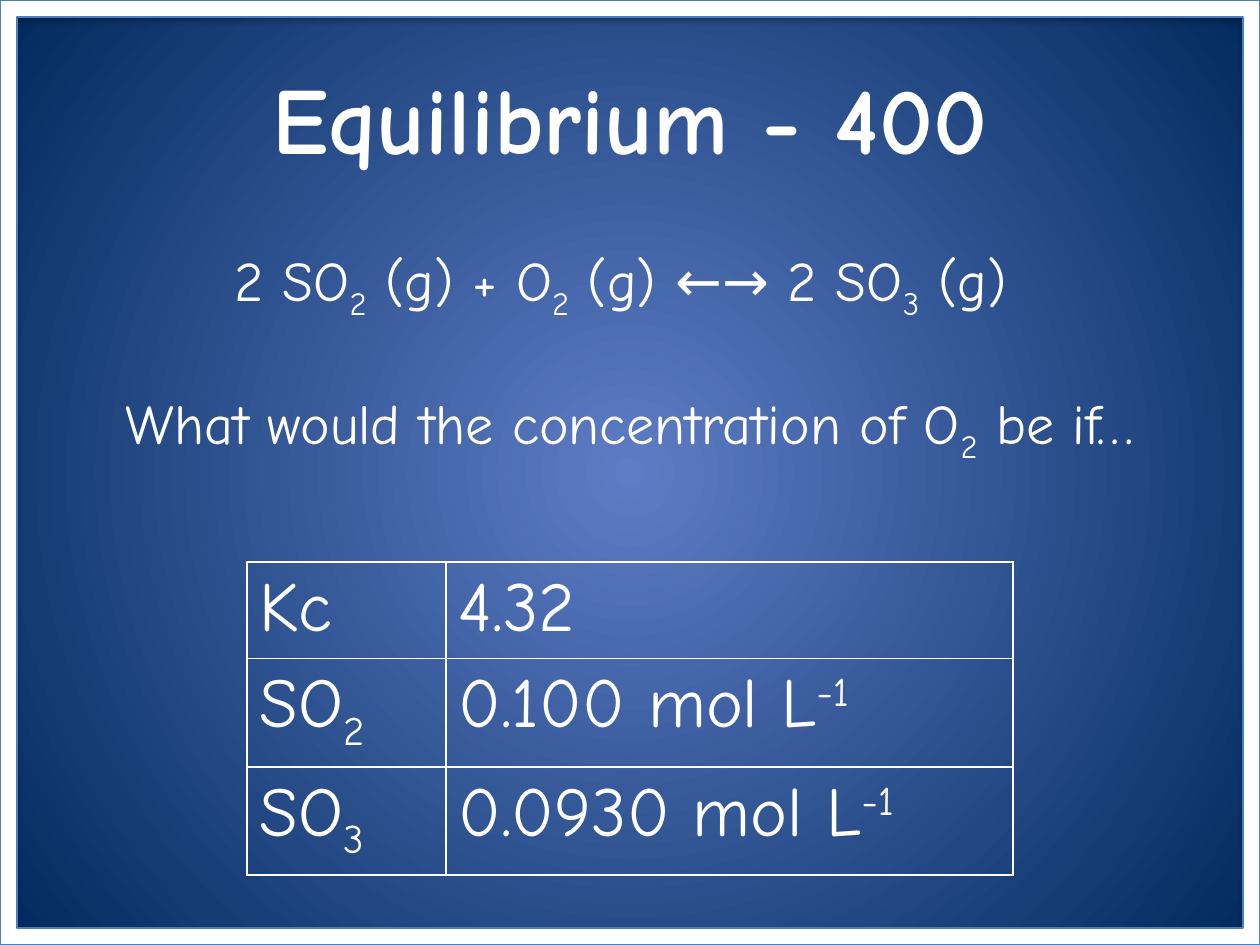
from lxml.etree import SubElement
from pptx import Presentation
from pptx.dml.color import RGBColor
from pptx.enum.shapes import MSO_SHAPE
from pptx.enum.text import MSO_ANCHOR, PP_ALIGN
from pptx.oxml import parse_xml
from pptx.oxml.ns import nsdecls, qn
from pptx.util import Inches, Pt

WIDTH, HEIGHT = 10, 7.5
FONT = "Comic Neue"
WHITE = "FFFFFF"
SUBSCRIPT, SUPERSCRIPT = -25000, 30000


def color(hex_string):
    return RGBColor.from_string(hex_string)


def inches(box):
    return [Inches(length) for length in box]


def write(paragraph, pieces, size, align=PP_ALIGN.LEFT, bold=False):
    """Fill a paragraph with pieces: plain strings or (string, baseline) pairs."""
    paragraph.alignment = align
    font = paragraph.font
    font.name, font.size, font.bold = FONT, Pt(size), bold
    font.color.rgb = color(WHITE)
    for piece in pieces:
        text, baseline = (piece, 0) if isinstance(piece, str) else piece
        run = paragraph.add_run()
        run.text = text
        if baseline:
            run.font._element.set("baseline", str(baseline))


def add_background(slide, center, edge):
    fill = slide.background.fill
    fill.gradient()
    for stop, shade in zip(fill.gradient_stops, (center, edge)):
        stop.color.rgb = color(shade)
    # Turn the linear gradient into a circle around the middle of the slide
    linear = slide.background._cSld.find(".//" + qn("a:lin"))
    linear.getparent().replace(linear, parse_xml(
        f'<a:path {nsdecls("a")} path="circle">'
        '<a:fillToRect l="50000" t="50000" r="50000" b="50000"/></a:path>'))


def add_frame(slide, box):
    frame = slide.shapes.add_shape(MSO_SHAPE.FRAME, *inches(box))
    frame.adjustments[0] = 0.018
    frame.fill.solid()
    frame.fill.fore_color.rgb = color(WHITE)
    frame.line.color.rgb = color("4B7EBC")
    frame.line.width = Pt(0.75)
    # Soft shadow falling straight down
    frame.shadow.inherit = False
    effects = frame._element.spPr.find(qn("a:effectLst"))
    shadow = SubElement(effects, qn("a:outerShdw"), blurRad=str(Pt(3.1)),
                        dist=str(Pt(1.8)), dir="5400000", rotWithShape="0")
    black = SubElement(shadow, qn("a:srgbClr"), val="000000")
    SubElement(black, qn("a:alpha"), val="35000")


def add_text(slide, box, lines, size, gap=0, anchor=MSO_ANCHOR.TOP, bold=False):
    frame = slide.shapes.add_textbox(*inches(box)).text_frame
    frame.word_wrap = True
    frame.vertical_anchor = anchor
    for index, pieces in enumerate(lines):
        paragraph = frame.paragraphs[0] if index == 0 else frame.add_paragraph()
        write(paragraph, pieces, size, PP_ALIGN.CENTER, bold)
        if index:
            paragraph.space_before = Pt(gap)


def outline(cell):
    properties = cell._tc.get_or_add_tcPr()
    for position, side in enumerate(("lnL", "lnR", "lnT", "lnB")):
        properties.insert(position, parse_xml(
            f'<a:{side} {nsdecls("a")} w="{Pt(1)}"><a:solidFill>'
            f'<a:srgbClr val="{WHITE}"/></a:solidFill></a:{side}>'))


def add_values(slide, box, rows, shares):
    table = slide.shapes.add_table(len(rows), len(shares), *inches(box)).table
    table.first_row = table.horz_banding = False
    for column, share in zip(table.columns, shares):
        column.width = Inches(box[2] * share)
    for r, row in enumerate(rows):
        for c, pieces in enumerate(row):
            cell = table.cell(r, c)
            cell.fill.background()
            outline(cell)
            write(cell.text_frame.paragraphs[0], pieces, 40)


def main():
    prs = Presentation()
    prs.slide_width, prs.slide_height = Inches(WIDTH), Inches(HEIGHT)
    slide = prs.slides.add_slide(prs.slide_layouts[6])
    margin = 0.05 * WIDTH
    content = WIDTH - 2 * margin

    add_background(slide, "5E7CC5", "00295C")

    # Title
    add_text(slide, (margin, 0.04 * HEIGHT, content, HEIGHT / 6),
             [["Equilibrium - 400"]], 54, anchor=MSO_ANCHOR.MIDDLE, bold=True)
    add_frame(slide, (0, 0, WIDTH, HEIGHT))

    # Reaction and question
    two, three = ("2", SUBSCRIPT), ("3", SUBSCRIPT)
    reaction = ["2 SO", two, " (g) + O", two, " (g) ←→ 2 SO", three, " (g) "]
    question = ["What would the concentration of O", two, " be if…"]
    add_text(slide, (margin, 1.9, content, 0.3 * HEIGHT),
             [reaction, question], 32, gap=38)

    # Known values
    inverse = ("-1", SUPERSCRIPT)
    values = [
        (["Kc"], ["4.32"]),
        (["SO", two], ["0.100 mol L", inverse]),
        (["SO", three], ["0.0930 mol L", inverse]),
    ]
    table_width = 6.08
    add_values(slide, ((WIDTH - table_width) / 2, 4.46, table_width, 2.3),
               values, (0.26, 0.74))

    prs.save("out.pptx")


if __name__ == "__main__":
    main()
